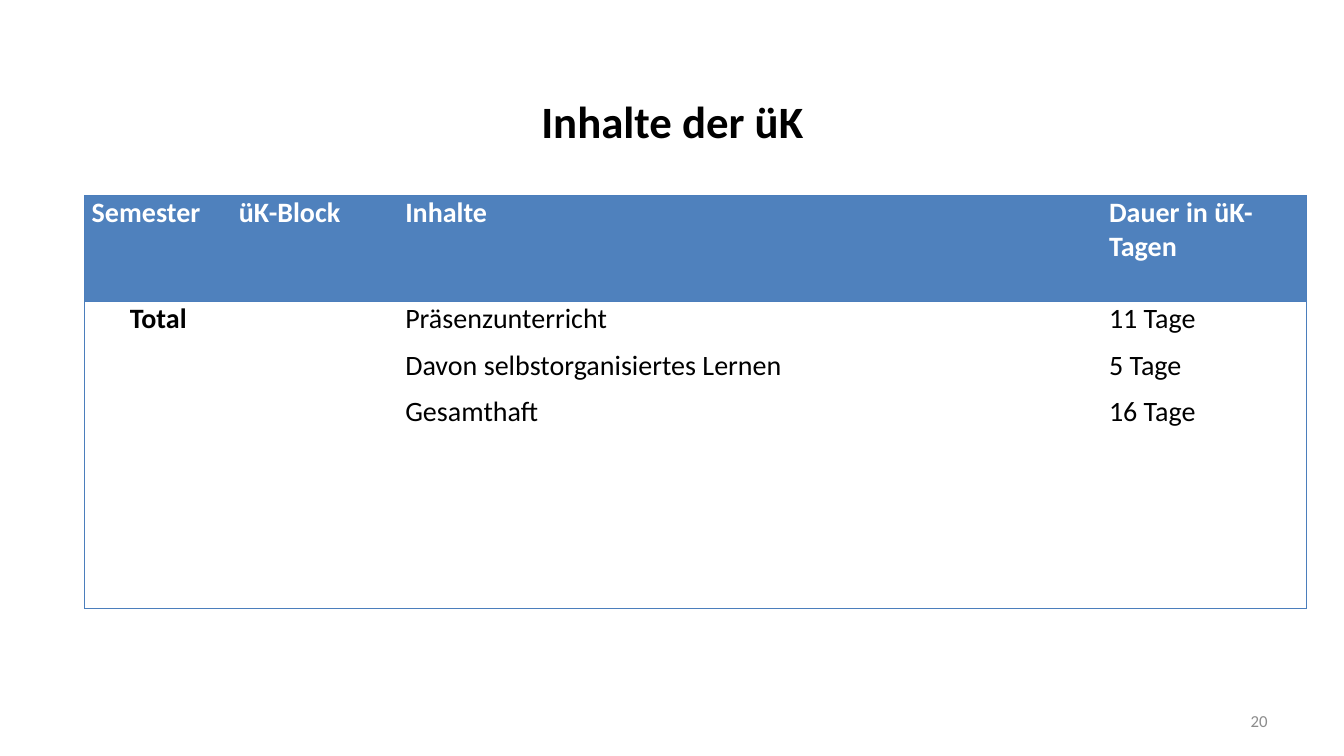
from lxml.etree import SubElement
from pptx import Presentation
from pptx.dml.color import RGBColor
from pptx.enum.text import MSO_ANCHOR, PP_ALIGN
from pptx.oxml.ns import qn
from pptx.util import Emu, Pt

PX = 9144  # EMU per px, 100 px to the inch
BLUE, EDGE, WHITE, BLACK, GREY = "4F81BD", "4B7EBC", "FFFFFF", "000000", "8C8C8C"
PLAIN_TABLE_STYLE = "{2D5ABB26-0587-4C30-8999-92F81FD0307C}"

COLUMN_WIDTHS = [146, 165, 698, 203]
ROW_HEIGHTS = [105, 305]
ROWS = [
    [["Semester"], ["üK-Block"], ["Inhalte"], ["Dauer in üK-Tagen"]],
    [["Total"], [],
     ["Präsenzunterricht", "Davon selbstorganisiertes Lernen", "Gesamthaft"],
     ["11 Tage", "5 Tage", "16 Tage"]],
]


def px(length):
    return Emu(length * PX)


def color(hex_string):
    return RGBColor.from_string(hex_string)


def set_all(target, values):
    for name, value in values.items():
        setattr(target, name, value)


def place(left, top, width, height):
    return {"left": px(left), "top": px(top), "width": px(width), "height": px(height)}


def write(frame, lines, size, hex_color, bold=False, align=PP_ALIGN.LEFT, before=0, after=0):
    for index, line in enumerate(lines):
        para = frame.add_paragraph() if index else frame.paragraphs[0]
        set_all(para, {"alignment": align, "space_before": Pt(before if index else 0),
                       "space_after": Pt(after)})
        span = para.add_run()
        span.text = line
        set_all(span.font, {"name": "Calibri", "size": Pt(size), "bold": bold})
        span.font.color.rgb = color(hex_color)


def add_title(page, text):
    title = page.shapes.title
    set_all(title, place(67, 84, 1200, 71))
    set_all(title.text_frame, {"vertical_anchor": MSO_ANCHOR.MIDDLE, "word_wrap": True})
    write(title.text_frame, [text], 32, BLACK, bold=True, align=PP_ALIGN.CENTER)


def add_borders(cell, sides):
    properties = cell._tc.get_or_add_tcPr()
    for side in sides:
        line = SubElement(properties, qn(f"a:ln{side}"), w=str(Pt(0.75)))
        fill = SubElement(line, qn("a:solidFill"))
        SubElement(fill, qn("a:srgbClr"), val=EDGE)


def fill_cell(cell, lines, row, column):
    # Outer frame plus the line under the header
    sides = ["L"] * (column == 0) + ["R"] * (column == len(COLUMN_WIDTHS) - 1) + ["T", "B"]
    add_borders(cell, sides)
    set_all(cell, {"margin_left": px(7), "margin_right": px(7), "margin_top": 0,
                   "margin_bottom": 0, "vertical_anchor": MSO_ANCHOR.TOP})
    header = row == 0
    if header:
        cell.fill.solid()
        cell.fill.fore_color.rgb = color(BLUE)
    else:
        cell.fill.background()
    total = not header and column == 0
    write(cell.text_frame, lines, 20, WHITE if header else BLACK, bold=header or total,
          align=PP_ALIGN.CENTER if total else PP_ALIGN.LEFT, before=3, after=6)


def add_content_table(page):
    position = place(84, 194, sum(COLUMN_WIDTHS), sum(ROW_HEIGHTS))
    table = page.shapes.add_table(len(ROWS), len(COLUMN_WIDTHS), **position).table
    table._tbl.tblPr.find(qn("a:tableStyleId")).text = PLAIN_TABLE_STYLE
    table.horz_banding = False
    for column, width in zip(table.columns, COLUMN_WIDTHS):
        column.width = px(width)
    for row, height in zip(table.rows, ROW_HEIGHTS):
        row.height = px(height)
    for r, cells in enumerate(ROWS):
        for c, lines in enumerate(cells):
            fill_cell(table.cell(r, c), lines, r, c)


def add_page_number(page, number):
    box = page.shapes.add_textbox(**place(956, 695, 311, 40))
    set_all(box.text_frame, {"word_wrap": True, "vertical_anchor": MSO_ANCHOR.MIDDLE})
    write(box.text_frame, [number], 12, GREY, align=PP_ALIGN.RIGHT)


def main():
    deck = Presentation()
    set_all(deck, {"slide_width": px(1333), "slide_height": px(750)})
    page = deck.slides.add_slide(deck.slide_layouts[5])
    add_title(page, "Inhalte der üK")
    add_content_table(page)
    add_page_number(page, "20")
    deck.save("out.pptx")


if __name__ == "__main__":
    main()
